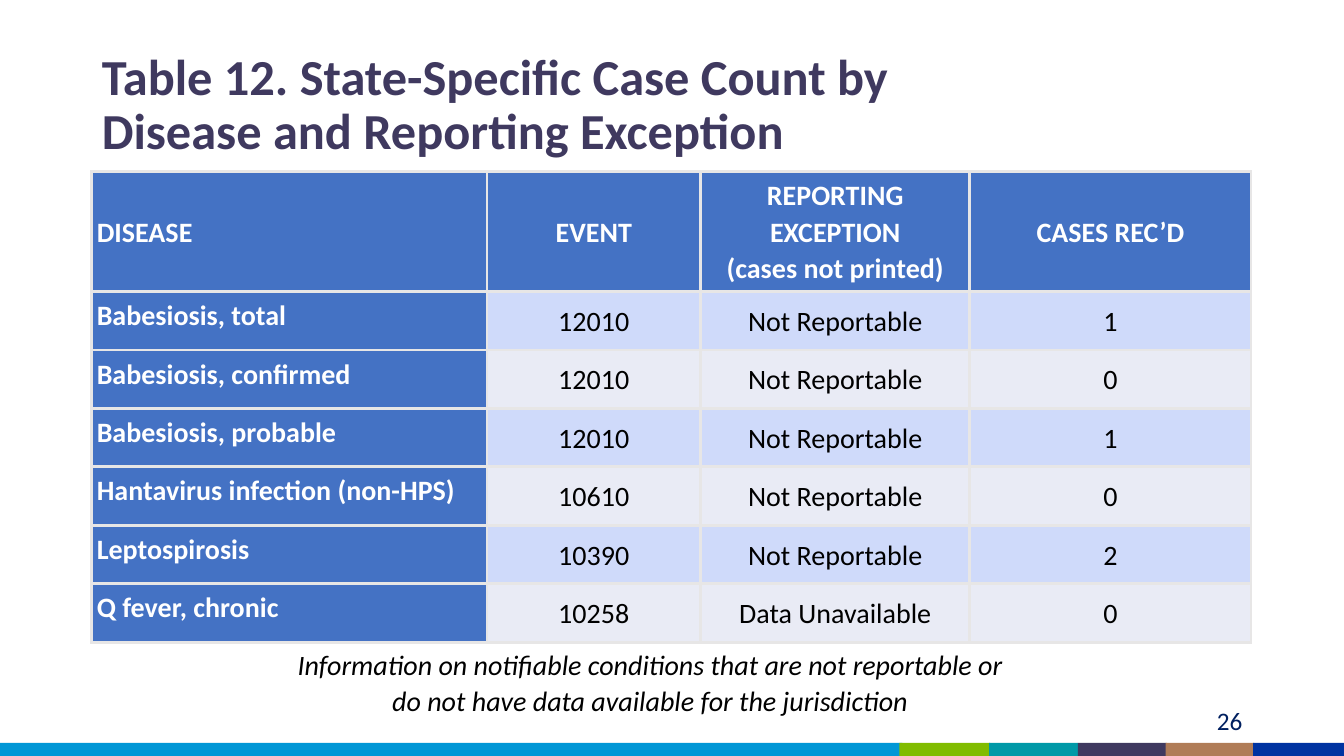
from lxml.etree import SubElement
from pptx import Presentation
from pptx.dml.color import RGBColor
from pptx.enum.shapes import MSO_SHAPE as Shape
from pptx.enum.text import MSO_ANCHOR as Anchor, MSO_AUTO_SIZE as AutoSize, PP_ALIGN as Align
from pptx.oxml.ns import qn
from pptx.util import Inches, Pt

FONT = "Calibri"
COLORS = {
    "title": "3F395F", "header": "4472C4", "odd": "CFDAFA", "even": "E9EBF5",
    "border": "E7E6E6", "white": "FFFFFF", "black": "000000", "number": "002060",
}
# Footer strip: left edge, width, color
FOOTER_BARS = [
    (0, 8.95, "0197D6"), (8.92, 0.9, "81BC00"), (9.81, 0.88, "0099A7"),
    (10.69, 0.88, "3F395F"), (11.56, 0.88, "B07C57"), (12.43, 0.9, "0033A1"),
]
COLUMN_WIDTHS = [3.92, 2.12, 2.67, 2.79]
HEADER_HEIGHT, ROW_HEIGHT = 1.13, 0.58
ROWS = [
    ("DISEASE", "EVENT", "REPORTING EXCEPTION\n(cases not printed)", "CASES REC’D"),
    ("Babesiosis, total", "12010", "Not Reportable", "1"),
    ("Babesiosis, confirmed", "12010", "Not Reportable", "0"),
    ("Babesiosis, probable", "12010", "Not Reportable", "1"),
    ("Hantavirus infection (non-HPS)", "10610", "Not Reportable", "0"),
    ("Leptospirosis", "10390", "Not Reportable", "2"),
    ("Q fever, chronic", "10258", "Data Unavailable", "0"),
]


def rgb(name):
    return RGBColor.from_string(COLORS[name])


def format_text(frame, size, color, align, spacing, bold=False, italic=False):
    for para in frame.paragraphs:
        para.alignment = align
        para.line_spacing = spacing
        for span in para.runs:
            font = span.font
            font.name, font.size = FONT, Pt(size)
            font.bold, font.italic = bold, italic
            font.color.rgb = rgb(color)


def add_footer_bar(page, left, width, color):
    bar = page.shapes.add_shape(
        Shape.RECTANGLE, Inches(left), Inches(7.37), Inches(width), Inches(0.16))
    bar.shadow.inherit = False
    bar.fill.solid()
    bar.fill.fore_color.rgb = RGBColor.from_string(color)
    bar.line.fill.background()


def set_title(page, text):
    title = page.shapes.title
    title.left, title.top = Inches(0.91), Inches(0.33)
    title.width, title.height = Inches(11.5), Inches(1.45)
    frame = title.text_frame
    frame.paragraphs[0].text = text
    frame.auto_size = AutoSize.NONE
    frame.vertical_anchor = Anchor.MIDDLE
    format_text(frame, 36, "title", Align.LEFT, 0.9, bold=True)


def add_text(page, text, left, top, width, height):
    box = page.shapes.add_textbox(Inches(left), Inches(top), Inches(width), Inches(height))
    frame = box.text_frame
    frame.word_wrap = True
    frame.text = text
    return frame


def set_borders(cell):
    properties = cell._tc.get_or_add_tcPr()
    for side in ("a:lnL", "a:lnR", "a:lnT", "a:lnB"):
        line = SubElement(properties, qn(side), w=str(Pt(2.25)))
        fill = SubElement(line, qn("a:solidFill"))
        SubElement(fill, qn("a:srgbClr"), val=COLORS["border"])


def fill_cell(cell, text, row, column):
    heading = row == 0 or column == 0
    set_borders(cell)
    cell.fill.solid()
    cell.fill.fore_color.rgb = rgb("header" if heading else "odd" if row % 2 else "even")
    cell.margin_left = cell.margin_right = Inches(0.05)
    cell.margin_top = cell.margin_bottom = Inches(0.05)
    cell.vertical_anchor = Anchor.TOP if column == 0 and row else Anchor.MIDDLE
    cell.text_frame.text = text
    format_text(cell.text_frame, 20, "white" if heading else "black",
                Align.CENTER if column else Align.LEFT, 1.07, bold=heading)


def add_case_table(page):
    height = HEADER_HEIGHT + ROW_HEIGHT * (len(ROWS) - 1)
    table = page.shapes.add_table(
        len(ROWS), len(COLUMN_WIDTHS), Inches(0.91), Inches(1.7),
        Inches(sum(COLUMN_WIDTHS)), Inches(height)).table
    table.horz_banding = False
    for column, width in zip(table.columns, COLUMN_WIDTHS):
        column.width = Inches(width)
    for row, texts in enumerate(ROWS):
        table.rows[row].height = Inches(ROW_HEIGHT if row else HEADER_HEIGHT)
        for column, text in enumerate(texts):
            fill_cell(table.cell(row, column), text, row, column)


def main():
    deck = Presentation()
    deck.slide_width, deck.slide_height = Inches(13.33), Inches(7.5)
    page = deck.slides.add_slide(deck.slide_layouts[5])

    # Footer strip
    for bar in FOOTER_BARS:
        add_footer_bar(page, *bar)

    # Title and table
    set_title(page, "Table 12. State-Specific Case Count by\nDisease and Reporting Exception")
    add_case_table(page)

    # Note under the table
    note = add_text(page, "Information on notifiable conditions that are not reportable or\n"
                    "do not have data available for the jurisdiction", 2.38, 6.41, 8.14, 0.58)
    format_text(note, 20, "black", Align.CENTER, 0.9, italic=True)
    for para, space in zip(note.paragraphs, (10, 4.5)):
        para.space_before = Pt(space)

    # Page number
    number = add_text(page, "26", 9.42, 6.95, 3, 0.4)
    format_text(number, 18, "number", Align.RIGHT, 1.0)

    deck.save("out.pptx")


if __name__ == "__main__":
    main()
